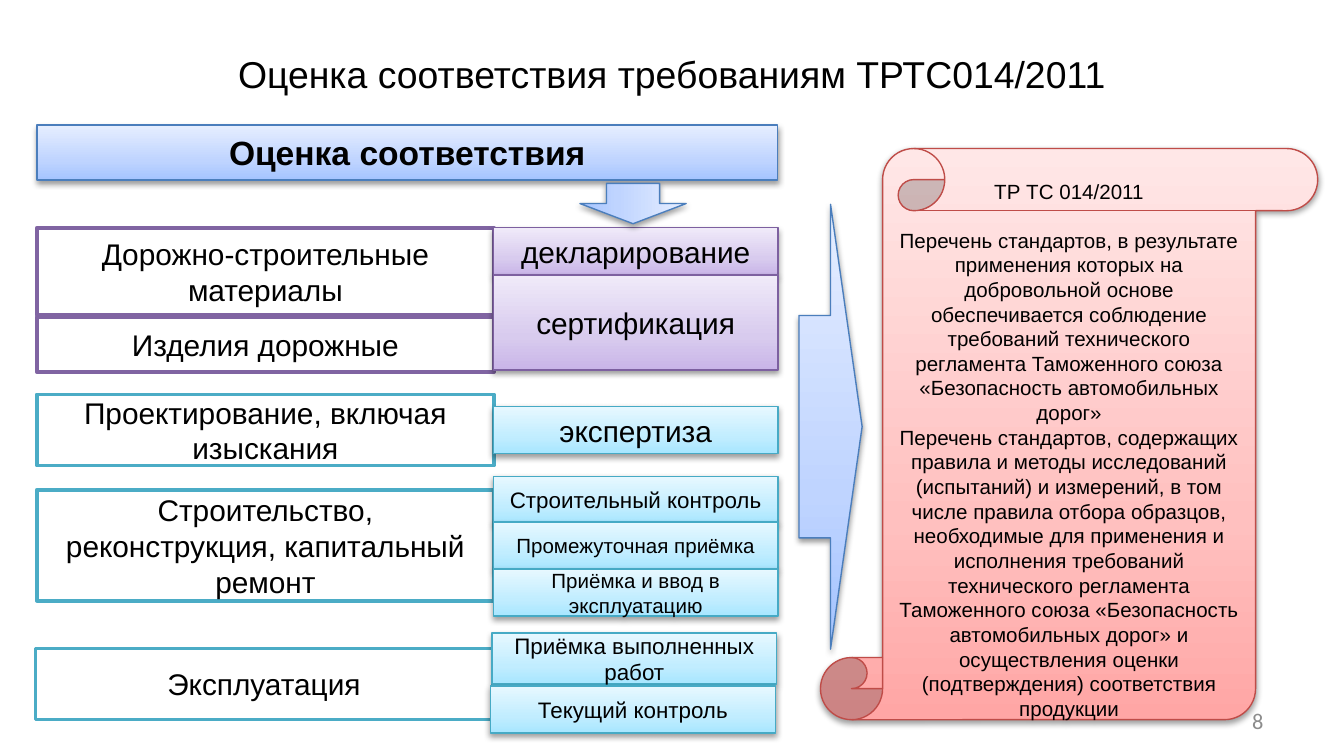
from pptx import Presentation
from pptx.dml.color import RGBColor
from pptx.enum.shapes import MSO_SHAPE as Shape
from pptx.enum.text import MSO_ANCHOR as Anchor, PP_ALIGN as Align
from pptx.oxml import parse_xml
from pptx.oxml.ns import nsdecls
from pptx.util import Pt

PX = 4572

BLACK = RGBColor(0x00, 0x00, 0x00)
WHITE = RGBColor(0xFF, 0xFF, 0xFF)
GRAY = RGBColor(0x8C, 0x8C, 0x8C)
PURPLE = RGBColor(0x80, 0x64, 0xA2)
TEAL = RGBColor(0x4B, 0xAC, 0xC6)


def theme(line, *stops):
    return RGBColor.from_string(line), [RGBColor.from_string(stop) for stop in stops]


BLUE_GLOSS = theme("4B7EBC", "A4C4FF", "BFD4FF", "E6EEFF")
PURPLE_GLOSS = theme("7D60A0", "C9B5E8", "D8CBEE", "F0EAF9")
TEAL_GLOSS = theme("46AAC5", "A7E6FF", "C1EDFF", "E7F8FF")
RED_GLOSS = theme("BF4C48", "FFA6A5", "FFC0BF", "FFE7E7")
STOP_POSITIONS = (0, 35000, 100000)

OBJECTS = [
    (55, 339, 130, PURPLE, "Дорожно-строительные материалы"),
    (55, 472, 82, PURPLE, "Изделия дорожные"),
    (55, 587, 106, TEAL, "Проектирование, включая изыскания"),
    (55, 729, 165, TEAL, "Строительство, реконструкция, капитальный ремонт"),
    (53, 965, 106, TEAL, "Эксплуатация"),
]
PROCEDURES = [
    (734, 339, 70, PURPLE_GLOSS, 16, "декларирование"),
    (734, 409, 142, PURPLE_GLOSS, 16, "сертификация"),
    (734, 605, 70, TEAL_GLOSS, 16, "экспертиза"),
    (734, 709, 70, TEAL_GLOSS, 12, "Строительный контроль"),
    (734, 777, 70, TEAL_GLOSS, 11, "Промежуточная приёмка"),
    (734, 847, 70, TEAL_GLOSS, 11, "Приёмка и ввод в эксплуатацию"),
    (732, 942, 76, TEAL_GLOSS, 12, "Приёмка выполненных работ"),
    (730, 1021, 70, TEAL_GLOSS, 12, "Текущий контроль"),
]
SCROLL_TEXT = [
    "ТР ТС 014/2011",
    "Перечень стандартов, в результате применения которых на добровольной основе "
    "обеспечивается соблюдение требований технического регламента Таможенного союза "
    "«Безопасность автомобильных дорог»",
    "Перечень стандартов, содержащих правила и методы исследований (испытаний) и "
    "измерений, в том числе правила отбора образцов, необходимые для применения и "
    "исполнения требований технического регламента Таможенного союза «Безопасность "
    "автомобильных дорог» и осуществления оценки (подтверждения) соответствия продукции",
]


def scale(*lengths):
    return [length * PX for length in lengths]


def write(shape, lines, size, color=BLACK, font="Arial", align=Align.CENTER, bold=False):
    frame = shape.text_frame
    frame.word_wrap = True
    frame.vertical_anchor = Anchor.MIDDLE
    frame.text = "\n".join(lines)
    for para in frame.paragraphs:
        para.alignment = align
        para.font.size = Pt(size)
        para.font.name = font
        para.font.bold = bold
        para.font.color.rgb = color


def add_label(page, area, text, size, **style):
    box = page.shapes.add_textbox(*scale(*area))
    write(box, [text], size, **style)


def add_outlined_box(page, area, color, text):
    box = page.shapes.add_shape(Shape.RECTANGLE, *scale(*area))
    box.shadow.inherit = False
    box.fill.solid()
    box.fill.fore_color.rgb = WHITE
    box.line.color.rgb = color
    box.line.width = Pt(2)
    write(box, [text], 16)


def add_glossy_shape(page, kind, area, gloss):
    line, colors = gloss
    shape = page.shapes.add_shape(kind, *scale(*area))
    shape.line.color.rgb = line
    shape.line.width = Pt(0.75)
    shape.fill.gradient()
    stops = "".join(
        f'<a:gs pos="{position}"><a:srgbClr val="{color}"/></a:gs>'
        for position, color in zip(STOP_POSITIONS, colors)
    )
    properties = shape._element.spPr
    properties.replace(properties.find("{*}gradFill"), parse_xml(
        f'<a:gradFill {nsdecls("a")} rotWithShape="1"><a:gsLst>{stops}</a:gsLst>'
        '<a:lin ang="16200000" scaled="0"/></a:gradFill>'
    ))
    shape.shadow.inherit = False
    properties.find("{*}effectLst").append(parse_xml(
        f'<a:outerShdw {nsdecls("a")} blurRad="40000" dist="20000" dir="5400000" '
        'rotWithShape="0"><a:srgbClr val="000000"><a:alpha val="38000"/>'
        '</a:srgbClr></a:outerShdw>'
    ))
    return shape


def add_scroll(page):
    scroll = add_glossy_shape(page, Shape.VERTICAL_SCROLL, (1221, 221, 740, 850), RED_GLOSS)
    write(scroll, SCROLL_TEXT, 11)
    scroll.text_frame.paragraphs[0].space_after = Pt(13)


def main():
    deck = Presentation()
    deck.slide_width, deck.slide_height = scale(2000, 1125)
    page = deck.slides.add_slide(deck.slide_layouts[6])

    add_label(page, (100, 46, 1800, 128), "Оценка соответствия требованиям ТРТС014/2011", 20)
    header = add_glossy_shape(page, Shape.RECTANGLE, (55, 186, 1102, 82), BLUE_GLOSS)
    write(header, ["Оценка соответствия"], 18, bold=True)

    for left, top, height, color, text in OBJECTS:
        add_outlined_box(page, (left, top, 680, height), color, text)
    for left, top, height, gloss, size, text in PROCEDURES:
        box = add_glossy_shape(page, Shape.RECTANGLE, (left, top, 424, height), gloss)
        write(box, [text], size)

    add_scroll(page)
    add_glossy_shape(page, Shape.RIGHT_ARROW, (1189, 304, 94, 662), BLUE_GLOSS)
    down_arrow = add_glossy_shape(page, Shape.RIGHT_ARROW, (912, 224, 60, 158), BLUE_GLOSS)
    down_arrow.rotation = 90
    add_label(page, (1434, 1043, 466, 60), "8", 12, color=GRAY, font="Calibri", align=Align.RIGHT)

    deck.save("out.pptx")


if __name__ == "__main__":
    main()
